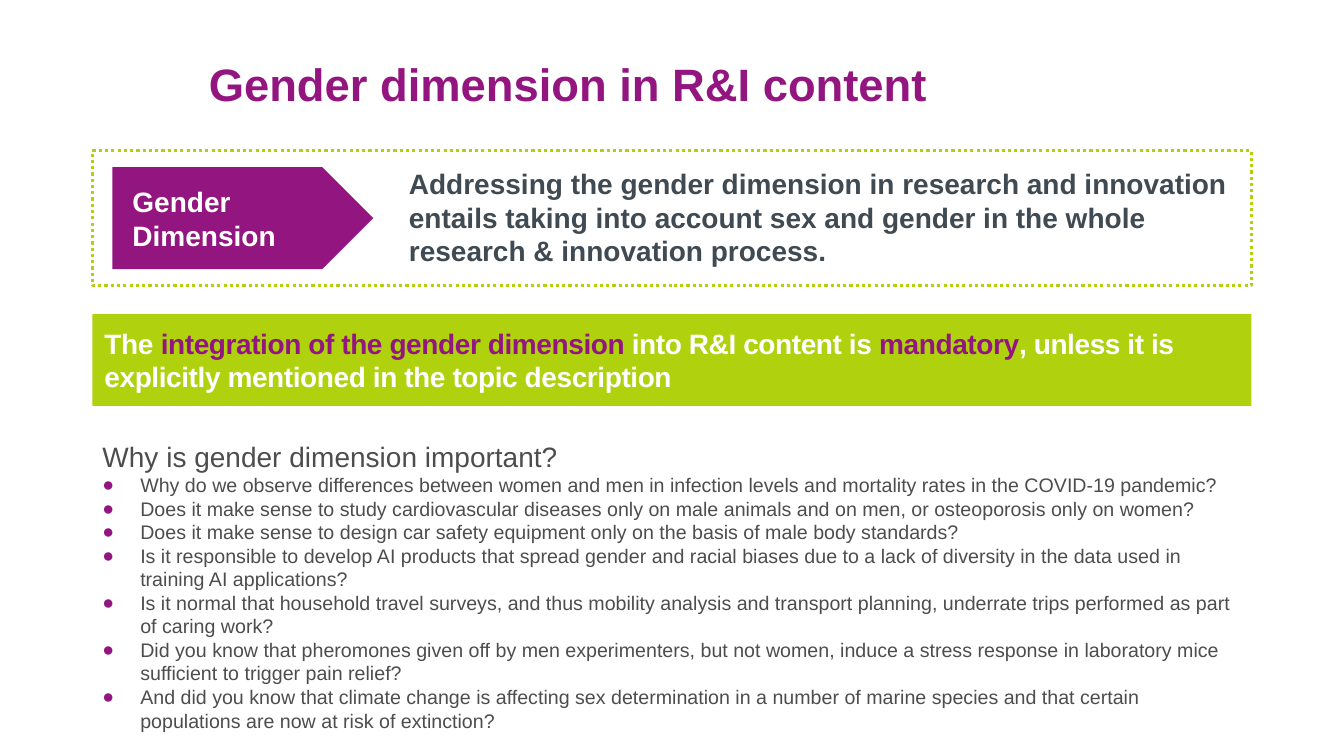
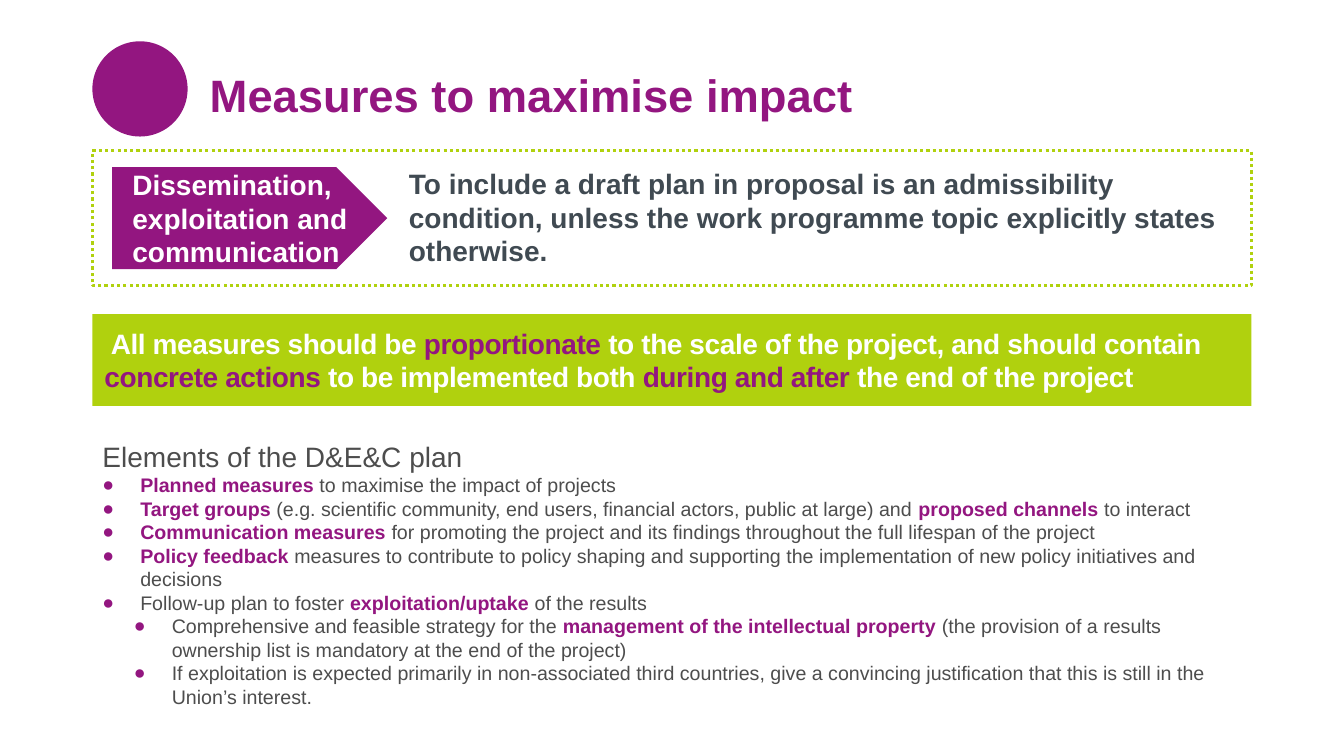
import pptx
import pptx.dml.color
import pptx.enum.dml
import pptx.enum.shapes
import pptx.enum.text
import pptx.oxml.ns
import pptx.util
from lxml import etree

Pt = pptx.util.Pt
SHAPES = pptx.enum.shapes.MSO_SHAPE
ANCHOR = pptx.enum.text.MSO_ANCHOR

COLORS = {
    "purple": "931680",
    "lime": "B0D10E",
    "slate": "404A52",
    "gray": "4D4D4D",
    "white": "FFFFFF",
}
FONT = "Arial"
LEFT, WIDTH = 66, 828
BULLET_HANGING = 27
LEVEL_STEP = 22.5

SLIDES = [
    {
        "title": "Gender dimension in R&I content",
        "title_at": (142, 36.7),
        "dot": False,
        "tag": "Gender Dimension",
        "tag_width": 186.5,
        "statement": "Addressing the gender dimension in research and innovation entails "
                     "taking into account sex and gender in the whole research & innovation process.",
        "banner": "The *integration of the gender dimension *into R&I content is *mandatory*, "
                  "unless it is explicitly mentioned in the topic description",
        "heading": "Why is gender dimension important?",
        "bullets": [
            (0, "Why do we observe differences between women and men in infection levels "
                "and mortality rates in the COVID-19 pandemic?"),
            (0, "Does it make sense to study cardiovascular diseases only on male animals "
                "and on men, or osteoporosis only on women?"),
            (0, "Does it make sense to design car safety equipment only on the basis of "
                "male body standards?"),
            (0, "Is it responsible to develop AI products that spread gender and racial "
                "biases due to a lack of diversity in the data used in training AI applications?"),
            (0, "Is it normal that household travel surveys, and thus mobility analysis and "
                "transport planning, underrate trips performed as part of caring work?"),
            (0, "Did you know that pheromones given off by men experimenters, but not women, "
                "induce a stress response in laboratory mice sufficient to trigger pain relief?"),
            (0, "And did you know that climate change is affecting sex determination in a "
                "number of marine species and that certain populations are now at risk of extinction?"),
        ],
    },
    {
        "title": "Measures to maximise impact",
        "title_at": (142.6, 44.6),
        "dot": True,
        "tag": "Dissemination, exploitation and communication",
        "tag_width": 196.5,
        "statement": "To include a draft plan in proposal is an admissibility condition, "
                     "unless the work programme topic explicitly states otherwise.",
        "banner": " All measures should be *proportionate* to the scale of the project, and should "
                  "contain *concrete actions *to be implemented both *during and after *the end of the project",
        "heading": "Elements of the D&E&C plan",
        "bullets": [
            (0, "*Planned measures *to maximise the impact of projects"),
            (0, "*Target groups *(e.g. scientific community, end users, financial actors, "
                "public at large) and *proposed channels *to interact"),
            (0, "*Communication measures *for promoting the project and its findings "
                "throughout the full lifespan of the project"),
            (0, "*Policy feedback *measures to contribute to policy shaping and supporting "
                "the implementation of new policy initiatives and decisions"),
            (0, "Follow-up plan to foster *exploitation/uptake* of the results"),
            (1, "Comprehensive and feasible strategy for the *management of the intellectual "
                "property *(the provision of a results ownership list is mandatory at the end of the project)"),
            (1, "If exploitation is expected primarily in non-associated third countries, give "
                "a convincing justification that this is still in the Union’s interest."),
        ],
    },
]


def rgb(name):
    return pptx.dml.color.RGBColor.from_string(COLORS[name])


def place(shape, left, top, width, height):
    shape.left, shape.top, shape.width, shape.height = map(Pt, (left, top, width, height))


def set_frame(shape, margins, anchor=ANCHOR.TOP):
    frame = shape.text_frame
    frame.word_wrap = True
    frame.auto_size = pptx.enum.text.MSO_AUTO_SIZE.NONE
    frame.vertical_anchor = anchor
    (frame.margin_left, frame.margin_top,
     frame.margin_right, frame.margin_bottom) = map(Pt, margins)
    return frame


def set_indent(paragraph, margin, first_line=0, bullet=None):
    properties = paragraph._p.get_or_add_pPr()
    properties.set("marL", str(Pt(margin)))
    properties.set("indent", str(Pt(first_line)))
    qn = pptx.oxml.ns.qn
    if bullet is None:
        etree.SubElement(properties, qn("a:buNone"))
        return
    color = etree.SubElement(properties, qn("a:buClr"))
    etree.SubElement(color, qn("a:srgbClr"), val=COLORS["purple"])
    etree.SubElement(properties, qn("a:buFont"), typeface=FONT)
    etree.SubElement(properties, qn("a:buChar"), char=bullet)


def write(paragraph, text, size, color, bold=False, tracking=None):
    paragraph.alignment = pptx.enum.text.PP_ALIGN.LEFT
    paragraph.space_before = Pt(0)
    for index, part in enumerate(text.split("*")):
        if not part:
            continue
        emphasized = index % 2 == 1
        run = paragraph.add_run()
        run.text = part
        run.font.name = FONT
        run.font.size = Pt(size)
        run.font.bold = bold or emphasized
        run.font.color.rgb = rgb("purple" if emphasized else color)
        if tracking is not None:
            run._r.get_or_add_rPr().set("spc", str(round(tracking * 100)))


def add_block(slide, kind, box, fill=None):
    shape = slide.shapes.add_shape(kind, *map(Pt, box))
    shape.shadow.inherit = False
    shape.line.fill.background()
    if fill:
        shape.fill.solid()
        shape.fill.fore_color.rgb = rgb(fill)
    else:
        shape.fill.background()
    return shape


def add_title(slide, text, left, top):
    title = slide.shapes.title
    place(title, left, top, 752, 41)
    frame = set_frame(title, (7.2, 3.6, 7.2, 0))
    write(frame.paragraphs[0], text, 32.4, "purple", bold=True)


def add_statement(slide, text):
    box = add_block(slide, SHAPES.RECTANGLE, (LEFT, 107.6, WIDTH, 96.5))
    box.line.color.rgb = rgb("lime")
    box.line.width = Pt(2.25)
    box.line.dash_style = pptx.enum.dml.MSO_LINE.ROUND_DOT
    paragraph = set_frame(box, (7.2, 11.5, 7.2, 3.6)).paragraphs[0]
    set_indent(paragraph, 219)
    write(paragraph, text, 20, "slate", bold=True)


def add_tag(slide, text, width):
    tag = add_block(slide, SHAPES.PENTAGON, (80.2, 119.3, width, 73), "purple")
    frame = set_frame(tag, (14.4, 1, 7.2, 1), ANCHOR.MIDDLE)
    write(frame.paragraphs[0], text, 20, "white", bold=True)


def add_banner(slide, text):
    banner = add_block(slide, SHAPES.RECTANGLE, (LEFT, 224.4, WIDTH, 65.5), "lime")
    frame = set_frame(banner, (8.64,) * 4)
    write(frame.paragraphs[0], text, 20, "white", bold=True, tracking=-0.3)


def add_list(slide, heading, bullets):
    body = slide.placeholders[1]
    place(body, LEFT, 310.3, WIDTH, 211)
    body.fill.solid()
    body.fill.fore_color.rgb = rgb("white")
    frame = set_frame(body, (7.2, 3.6, 7.2, 3.6))
    set_indent(frame.paragraphs[0], 0)
    write(frame.paragraphs[0], heading, 20, "gray")
    for level, text in bullets:
        paragraph = frame.add_paragraph()
        paragraph.level = level
        set_indent(paragraph, BULLET_HANGING + level * LEVEL_STEP, -BULLET_HANGING, "●")
        write(paragraph, text, 14, "gray")


def build_slide(presentation, content):
    slide = presentation.slides.add_slide(presentation.slide_layouts[1])
    add_title(slide, content["title"], *content["title_at"])
    add_statement(slide, content["statement"])
    add_banner(slide, content["banner"])
    add_tag(slide, content["tag"], content["tag_width"])
    add_list(slide, content["heading"], content["bullets"])
    if content["dot"]:
        add_block(slide, SHAPES.OVAL, (LEFT, 29.5, 68, 68), "purple")


def main():
    presentation = pptx.Presentation()
    presentation.slide_width = Pt(960)
    presentation.slide_height = Pt(540)
    for content in SLIDES:
        build_slide(presentation, content)
    presentation.save("out.pptx")


if __name__ == "__main__":
    main()
